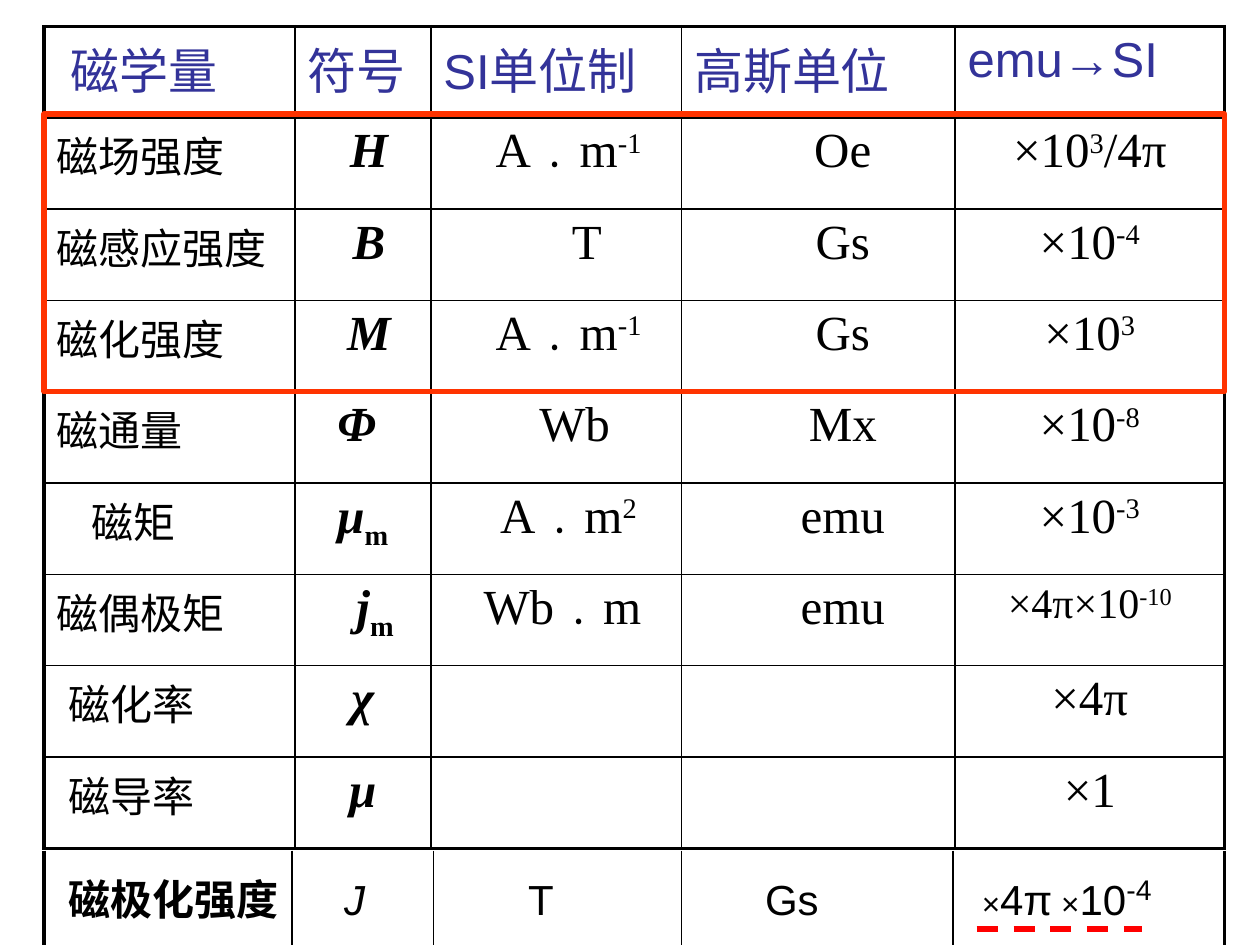
from dataclasses import dataclass

import lxml.etree
import pptx
import pptx.dml.color
import pptx.enum.dml
import pptx.enum.shapes
import pptx.enum.text
import pptx.oxml
import pptx.oxml.ns
import pptx.util

COLORS = {"ink": "000000", "header": "333399", "highlight": "FF3300", "dash": "FF0000"}
SANS, SERIF = "Arial", "Times New Roman"
COLUMNS = (1.99, 1.08, 1.99, 2.17, 2.14)
CELL_MARGIN = pptx.util.Inches(0.1)
THIN, THICK = 1, 2.25

HEADERS = ("磁学量", "符号", "SI单位制", "高斯单位", "emu→SI")
QUANTITIES = (
    ("磁场强度", ("H",), ("A﹒m", "-1"), ("Oe",), ("×10", "3", "/4π")),
    ("磁感应强度", ("B",), ("T",), ("Gs",), ("×10", "-4")),
    ("磁化强度", ("M",), ("A﹒m", "-1"), ("Gs",), ("×10", "3")),
    ("磁通量", ("Φ",), ("Wb",), ("Mx",), ("×10", "-8")),
    ("磁矩", ("μ", "m"), ("A﹒m", "2"), ("emu",), ("×10", "-3")),
    ("磁偶极矩", ("j", "m"), ("Wb﹒m",), ("emu",), ("×4π×10", "-10")),
    ("磁化率", ("χ",), (), (), ("×4π",)),
    ("磁导率", ("μ",), (), (), ("×1",)),
)
NAME_INDENTS = (0, 0, 0, 0, 20, 0, 6.7, 6.7)
SYMBOL_INDENTS = (7, 7, 7, -7, 0, 14, 0, 0)
UNIT_INDENTS = (14, 35, 14, 21, 14, 7, 0, 0)
GAUSS_INDENT = 28
ROWS = len(QUANTITIES) + 1


@dataclass
class Box:
    left: int
    top: int
    width: int
    height: int

    def region(self, left, top, width, height):
        return Box(
            int(self.left + self.width * left),
            int(self.top + self.height * top),
            int(self.width * width),
            int(self.height * height),
        )

    def bounds(self):
        return self.left, self.top, self.width, self.height


def rgb(name):
    return pptx.dml.color.RGBColor.from_string(COLORS[name])


def format_font(font, size, name, color="ink", bold=False, italic=False):
    font.size = pptx.util.Pt(size)
    font.name = name
    font.color.rgb = rgb(color)
    font.bold = bold
    font.italic = italic


def add_run(paragraph, text, baseline=0):
    run = paragraph.add_run()
    run.text = text
    if baseline:
        run.font._element.set("baseline", str(baseline * 1000))
    return run


def fill_cell(cell, pieces, size, name, color="ink", bold=False, italic=False,
              centred=False, indent=0, baseline=30):
    cell.margin_left = CELL_MARGIN + pptx.util.Pt(max(indent, 0))
    cell.margin_right = CELL_MARGIN + pptx.util.Pt(max(-indent, 0))
    paragraph = cell.text_frame.paragraphs[0]
    if centred:
        paragraph.alignment = pptx.enum.text.PP_ALIGN.CENTER
    format_font(paragraph.font, size, name, color, bold, italic)
    for index, text in enumerate(pieces):
        shifted = index % 2 == 1
        run = add_run(paragraph, text, baseline if shifted else 0)
        if shifted and italic:
            run.font.italic = False


def border_cell(cell, row, column):
    last_column = len(COLUMNS) - 1
    outer = {"L": column == 0, "R": column == last_column, "T": row == 0, "B": row == ROWS - 1}
    properties = cell._tc.get_or_add_tcPr()
    for side, is_outer in outer.items():
        width = pptx.util.Pt(THICK if is_outer else THIN)
        properties.append(pptx.oxml.parse_xml(
            f'<a:ln{side} {pptx.oxml.ns.nsdecls("a")} w="{int(width)}"><a:solidFill>'
            f'<a:srgbClr val="{COLORS["ink"]}"/></a:solidFill></a:ln{side}>'
        ))
    cell.fill.background()


def add_units_table(slide, box):
    table = slide.shapes.add_table(ROWS, len(COLUMNS), *box.bounds()).table
    table.first_row = False
    table.horz_banding = False
    for column, share in zip(table.columns, COLUMNS):
        column.width = int(box.width * share / sum(COLUMNS))
    for row in table.rows:
        row.height = box.height // ROWS
    for row in range(ROWS):
        for column in range(len(COLUMNS)):
            border_cell(table.cell(row, column), row, column)

    for column, header in enumerate(HEADERS):
        fill_cell(table.cell(0, column), (header,), 28, SANS, "header",
                  indent=0 if column else 7.8)
    for index, (name, symbol, unit, gauss, factor) in enumerate(QUANTITIES):
        cells = [table.cell(index + 1, column) for column in range(len(COLUMNS))]
        fill_cell(cells[0], (name,), 24, SANS, indent=NAME_INDENTS[index])
        fill_cell(cells[1], symbol, 28, SERIF, bold=True, italic=True, centred=True,
                  indent=SYMBOL_INDENTS[index], baseline=-25)
        fill_cell(cells[2], unit, 28, SERIF, centred=True, indent=UNIT_INDENTS[index])
        fill_cell(cells[3], gauss, 28, SERIF, centred=True, indent=GAUSS_INDENT)
        factor_size = 24 if factor[0] == "×4π×10" else 28
        fill_cell(cells[4], factor, factor_size, SERIF, centred=True)


def add_line(slide, start, end, color, width):
    line = slide.shapes.add_connector(pptx.enum.shapes.MSO_CONNECTOR.STRAIGHT, *start, *end)
    line.line.color.rgb = rgb(color)
    line.line.width = pptx.util.Pt(width)
    lxml.etree.SubElement(line._element.spPr, pptx.oxml.ns.qn("a:effectLst"))
    return line


def add_polarization_row(slide, box):
    text_box = slide.shapes.add_textbox(*box.region(0.01, 0.1, 1, 0.75).bounds())
    text_box.text_frame.word_wrap = True
    paragraph = text_box.text_frame.paragraphs[0]
    format_font(paragraph.font, 24, SANS)
    tabs = pptx.oxml.parse_xml(f'<a:tabLst {pptx.oxml.ns.nsdecls("a")}/>')
    for position in (2.19, 3.65, 5.53, 7.25):
        tab = lxml.etree.SubElement(tabs, pptx.oxml.ns.qn("a:tab"))
        tab.set("pos", str(int(box.width * position / sum(COLUMNS))))
        tab.set("algn", "l")
    paragraph._p.get_or_add_pPr().insert(0, tabs)

    add_run(paragraph, "磁极化强度").font.bold = True
    add_run(paragraph, "\tJ").font.italic = True
    add_run(paragraph, "\tT\tGs\t")
    add_run(paragraph, "×").font.size = pptx.util.Pt(18)
    add_run(paragraph, "4π")
    add_run(paragraph, " ×").font.size = pptx.util.Pt(18)
    add_run(paragraph, "10")
    add_run(paragraph, "-4", 30).font.size = pptx.util.Pt(28)

    for share, width in ((0, 2), (0.21, 0.75), (0.33, 0.75), (0.54, 0.75), (0.77, 0.75), (1, 2)):
        edge = box.region(share, 0, 0, 1)
        add_line(slide, (edge.left, edge.top), (edge.left, edge.top + edge.height), "ink", width)
    underline = box.region(0.79, 0.83, 0.14, 0)
    dashes = add_line(slide, (underline.left, underline.top),
                      (underline.left + underline.width, underline.top), "dash", 3)
    dashes.line.dash_style = pptx.enum.dml.MSO_LINE.DASH


def add_highlight(slide, box):
    frame = slide.shapes.add_shape(pptx.enum.shapes.MSO_SHAPE.RECTANGLE, *box.bounds())
    frame.shadow.inherit = False
    frame.fill.background()
    frame.line.color.rgb = rgb("highlight")
    frame.line.width = pptx.util.Pt(3)


def main():
    presentation = pptx.Presentation()
    presentation.slide_width = pptx.util.Inches(10)
    presentation.slide_height = pptx.util.Inches(7.5)
    slide = presentation.slides.add_slide(presentation.slide_layouts[6])
    page = Box(0, 0, presentation.slide_width, presentation.slide_height)
    table_box = page.region(0.035, 0.028, 0.937, 0.87)
    add_units_table(slide, table_box)
    add_polarization_row(slide, page.region(0.035, 0.9, 0.937, 0.1))
    add_highlight(slide, table_box.region(0, 0.96 / ROWS, 1, 3.04 / ROWS))
    presentation.save("out.pptx")


if __name__ == "__main__":
    main()
